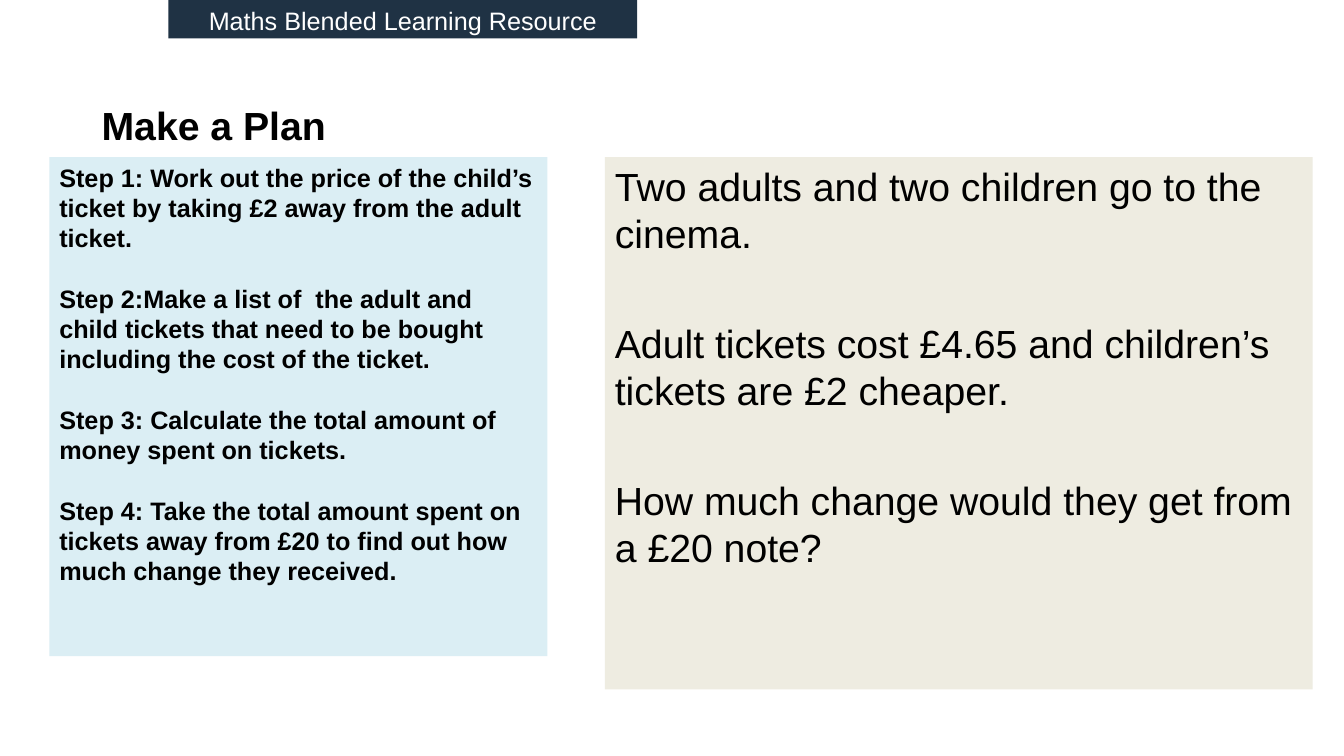
from dataclasses import dataclass

from pptx import Presentation
from pptx.dml.color import RGBColor
from pptx.enum import shapes, text
from pptx.slide import Slide
from pptx.util import Inches, Pt

BLACK = RGBColor(0x00, 0x00, 0x00)
WHITE = RGBColor(0xFF, 0xFF, 0xFF)
NAVY = RGBColor(0x1F, 0x32, 0x44)
SKY = RGBColor(0xDB, 0xEE, 0xF4)
SAND = RGBColor(0xEE, 0xEC, 0xE1)


@dataclass(frozen=True)
class Panel:
    left: float
    top: float
    width: float
    height: float
    fill: RGBColor | None
    lines: tuple[str, ...]
    size: int
    color: RGBColor = BLACK
    bold: bool = False
    gap: float = 0
    align: text.PP_ALIGN = text.PP_ALIGN.LEFT
    anchor: text.MSO_ANCHOR = text.MSO_ANCHOR.TOP


TITLE = Panel(0.91, 0.92, 9, 0.64, None, ("Make a Plan",), 28, bold=True,
              anchor=text.MSO_ANCHOR.MIDDLE)
STEPS = Panel(0.49, 1.56, 4.94, 4.95, SKY, (
    "Step 1: Work out the price of the child’s ticket by taking £2 away from the adult ticket.",
    "Step 2:Make a list of  the adult and child tickets that need to be bought "
    "including the cost of the ticket.",
    "Step 3: Calculate the total amount of money spent on tickets.",
    "Step 4: Take the total amount spent on tickets away from £20 to find out how "
    "much change they received.",
), 18, bold=True, gap=21.6)
BANNER = Panel(1.67, 0, 4.65, 0.38, NAVY, ("Maths Blended Learning Resource",), 18,
               color=WHITE, align=text.PP_ALIGN.CENTER)
TASK = Panel(6, 1.56, 7.02, 5.28, SAND, (
    "Two adults and two children go to the cinema.",
    "Adult tickets cost £4.65 and children’s tickets are £2 cheaper.",
    "How much change would they get from a £20 note?",
), 28, gap=44.8)


def draw(slide: Slide, panel: Panel) -> None:
    place = [Inches(n) for n in (panel.left, panel.top, panel.width, panel.height)]
    if panel.fill is None:
        shape = slide.shapes.add_textbox(*place)
    else:
        shape = slide.shapes.add_shape(shapes.MSO_SHAPE.RECTANGLE, *place)
        shape.shadow.inherit = False
        shape.fill.solid()
        shape.fill.fore_color.rgb = panel.fill
        shape.line.fill.background()
    frame = shape.text_frame
    frame.word_wrap = True
    frame.vertical_anchor = panel.anchor
    for index, line in enumerate(panel.lines):
        para = frame.add_paragraph() if index else frame.paragraphs[0]
        para.alignment = panel.align
        if index:
            para.space_before = Pt(panel.gap)
        run = para.add_run()
        run.text = line
        run.font.name = "Arial"
        run.font.size = Pt(panel.size)
        run.font.bold = panel.bold
        run.font.color.rgb = panel.color


def main() -> None:
    deck = Presentation()
    deck.slide_width = Inches(13.33)
    deck.slide_height = Inches(7.5)
    slide = deck.slides.add_slide(deck.slide_layouts[6])
    for panel in (TITLE, STEPS, BANNER, TASK):
        draw(slide, panel)
    deck.save("out.pptx")


if __name__ == "__main__":
    main()
